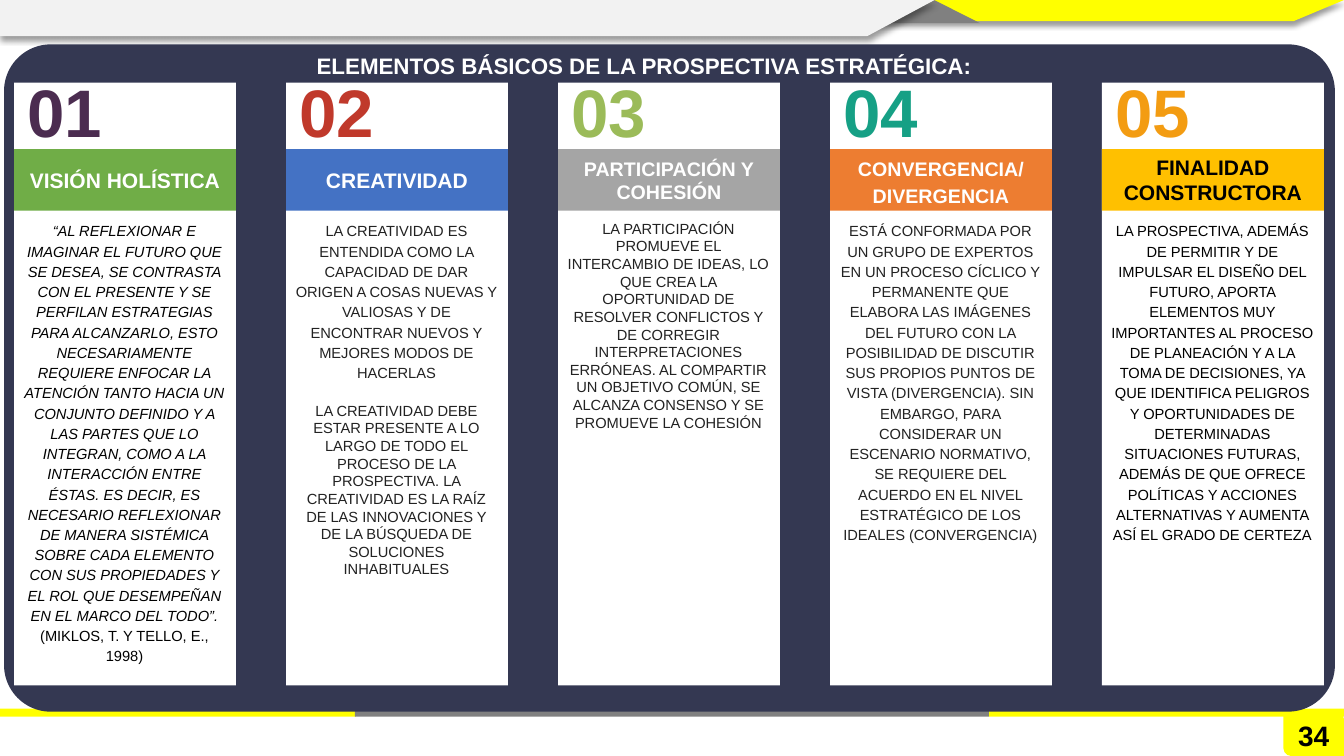
from dataclasses import dataclass

from lxml import etree
from pptx import Presentation
from pptx.dml.color import RGBColor
from pptx.enum.shapes import MSO_SHAPE as Preset
from pptx.enum.text import MSO_ANCHOR as Anchor, MSO_AUTO_SIZE as AutoSize, PP_ALIGN as Align
from pptx.oxml.ns import qn
from pptx.util import Inches, Pt


@dataclass(frozen=True)
class Theme:
    """Colours, font and type sizes of the slide."""
    font: str = "Arial"
    white: str = "FFFFFF"
    black: str = "000000"
    ink: str = "222222"
    navy: str = "343852"
    yellow: str = "FFFF00"
    grey: str = "808080"
    pale: str = "F2F2F2"
    title_size: float = 16
    number_size: float = 48
    body_size: float = 10.5
    page_size: float = 20


THEME = Theme()


@dataclass(frozen=True)
class Pillar:
    """One numbered column: its heading, colours and paragraphs of runs."""
    heading: str
    band: str
    number_color: str
    paragraphs: tuple
    heading_size: float = 15
    heading_color: str = THEME.white
    heading_spacing: float = 1.0
    body_color: str = THEME.ink
    body_spacings: tuple = (1.15,)


PILLARS = (
    Pillar(
        "VISIÓN HOLÍSTICA", "70AD47", "4B2C50",
        (((
            "“AL REFLEXIONAR E IMAGINAR EL FUTURO QUE SE DESEA, SE CONTRASTA CON EL "
            "PRESENTE Y SE PERFILAN ESTRATEGIAS PARA ALCANZARLO, ESTO NECESARIAMENTE "
            "REQUIERE ENFOCAR LA ATENCIÓN TANTO HACIA UN CONJUNTO DEFINIDO Y A LAS "
            "PARTES QUE LO INTEGRAN, COMO A LA INTERACCIÓN ENTRE ÉSTAS. ES DECIR, ES "
            "NECESARIO REFLEXIONAR DE MANERA SISTÉMICA SOBRE CADA ELEMENTO CON SUS "
            "PROPIEDADES Y EL ROL QUE DESEMPEÑAN EN EL MARCO DEL TODO”.", True),
          (" (MIKLOS, T. Y TELLO, E., 1998)", False)),),
        body_color=THEME.black),
    Pillar(
        "CREATIVIDAD", "4472C4", "C0392B",
        (((
            "LA CREATIVIDAD ES ENTENDIDA COMO LA CAPACIDAD DE DAR ORIGEN A COSAS "
            "NUEVAS Y VALIOSAS Y DE ENCONTRAR NUEVOS Y MEJORES MODOS DE HACERLAS", False),),
         ((
            "LA CREATIVIDAD DEBE ESTAR PRESENTE A LO LARGO DE TODO EL PROCESO DE LA "
            "PROSPECTIVA. LA CREATIVIDAD ES LA RAÍZ DE LAS INNOVACIONES Y DE LA "
            "BÚSQUEDA DE SOLUCIONES INHABITUALES", False),)),
        body_spacings=(1.15, 1.0)),
    Pillar(
        "PARTICIPACIÓN Y COHESIÓN", "A5A5A5", "9BBB59",
        (((
            "LA PARTICIPACIÓN PROMUEVE EL INTERCAMBIO DE IDEAS, LO QUE CREA LA "
            "OPORTUNIDAD DE RESOLVER CONFLICTOS Y DE CORREGIR INTERPRETACIONES "
            "ERRÓNEAS. AL COMPARTIR UN OBJETIVO COMÚN, SE ALCANZA CONSENSO Y SE "
            "PROMUEVE LA COHESIÓN", False),),),
        heading_size=14, body_spacings=(1.0,)),
    Pillar(
        "CONVERGENCIA/ DIVERGENCIA", "ED7D31", "16A085",
        (((
            "ESTÁ CONFORMADA POR UN GRUPO DE EXPERTOS EN UN PROCESO CÍCLICO Y "
            "PERMANENTE QUE ELABORA LAS IMÁGENES DEL FUTURO CON LA POSIBILIDAD DE "
            "DISCUTIR SUS PROPIOS PUNTOS DE VISTA (DIVERGENCIA). SIN EMBARGO, PARA "
            "CONSIDERAR UN ESCENARIO NORMATIVO, SE REQUIERE DEL ACUERDO EN EL NIVEL "
            "ESTRATÉGICO DE LOS IDEALES (CONVERGENCIA)", False),),),
        heading_size=14, heading_spacing=1.15),
    Pillar(
        "FINALIDAD CONSTRUCTORA", "FFC000", "F39C12",
        (((
            "LA PROSPECTIVA, ADEMÁS DE PERMITIR Y DE IMPULSAR EL DISEÑO DEL FUTURO, "
            "APORTA ELEMENTOS MUY IMPORTANTES AL PROCESO DE PLANEACIÓN Y A LA TOMA DE "
            "DECISIONES, YA QUE IDENTIFICA PELIGROS Y OPORTUNIDADES DE DETERMINADAS "
            "SITUACIONES FUTURAS, ADEMÁS DE QUE OFRECE POLÍTICAS Y ACCIONES "
            "ALTERNATIVAS Y AUMENTA ASÍ EL GRADO DE CERTEZA", False),),),
        heading_color=THEME.black, body_color=THEME.black),
)


def paint(shape, color):
    """Give a shape a plain fill without line or shadow."""
    shape.shadow.inherit = False
    shape.fill.solid()
    shape.fill.fore_color.rgb = RGBColor.from_string(color)
    shape.line.fill.background()
    return shape


def add_block(slide, box, color, preset=Preset.RECTANGLE):
    """Draw a filled preset shape."""
    return paint(slide.shapes.add_shape(preset, *map(Inches, box)), color)


def add_banner(slide, points, color):
    """Draw a header outline with a soft shadow below it."""
    start, *rest = [(Inches(x), Inches(y)) for x, y in points]
    builder = slide.shapes.build_freeform(*start)
    builder.add_line_segments(rest, close=True)
    banner = paint(builder.convert_to_shape(), color)
    effects = banner.element.spPr.find(qn("a:effectLst"))
    shadow = etree.SubElement(effects, qn("a:outerShdw"), blurRad=str(Pt(4)),
                              dist=str(Pt(3)), dir="5400000", rotWithShape="0")
    tint = etree.SubElement(shadow, qn("a:srgbClr"), val=THEME.black)
    etree.SubElement(tint, qn("a:alpha"), val="40000")


def set_frame(frame, anchor=Anchor.TOP, side=0.1, edge=0.05, wrap=True):
    """Set wrapping, anchoring and insets of a text frame."""
    frame.word_wrap = wrap
    frame.auto_size = AutoSize.NONE
    frame.vertical_anchor = anchor
    frame.margin_left = frame.margin_right = Inches(side)
    frame.margin_top = frame.margin_bottom = Inches(edge)


def write(paragraph, runs, size, color, bold=False, align=Align.CENTER, spacing=1.0):
    """Fill a paragraph with (text, italic) runs."""
    paragraph.alignment = align
    paragraph.line_spacing = spacing
    for text, italic in runs:
        run = paragraph.add_run()
        run.text = text
        run.font.name = THEME.font
        run.font.size = Pt(size)
        run.font.bold = bold
        run.font.italic = italic
        run.font.color.rgb = RGBColor.from_string(color)


def add_text_frame(slide, box, **layout):
    """Add a text box and return its frame."""
    frame = slide.shapes.add_textbox(*map(Inches, box)).text_frame
    set_frame(frame, **layout)
    return frame


def add_decoration(slide):
    """Draw the header banners, footer stripe and page number."""
    add_banner(slide, [(6.3, 0), (13.33, 0), (12.83, 0.21), (6.3, 0.21)], THEME.yellow)
    add_block(slide, (8.81, 0, 0.91, 0.23), THEME.grey, Preset.ISOSCELES_TRIANGLE)
    add_banner(slide, [(0, 0), (9.27, 0), (8.6, 0.36), (0, 0.36)], THEME.pale)
    for left, width, color in ((0, 3.53, THEME.yellow), (3.52, 6.29, THEME.grey),
                               (9.81, 3.52, THEME.yellow)):
        add_block(slide, (left, 7.03, width, 0.08), color)
    page = add_block(slide, (12.73, 7.06, 0.6, 0.44), THEME.yellow,
                     Preset.ROUND_2_DIAG_RECTANGLE)
    page.adjustments[0], page.adjustments[1] = 0, 0.17
    set_frame(page.text_frame)
    write(page.text_frame.paragraphs[0], [("34", False)], THEME.page_size,
          THEME.black, bold=True)


def add_title(slide, text):
    """Place the title placeholder over the panel."""
    title = slide.shapes.title
    title.element.getparent().append(title.element)
    title.left, title.top, title.width, title.height = map(Inches, (3.04, 0.43, 6.77, 0.39))
    set_frame(title.text_frame, wrap=False)
    write(title.text_frame.paragraphs[0], [(text, False)], THEME.title_size, THEME.white,
          bold=True, align=Align.LEFT, spacing=1.15)


def add_pillar(slide, index, pillar):
    """Draw one numbered column with its heading band and text."""
    left, width = 0.14 + 2.6975 * index, 2.2
    add_block(slide, (left, 0.82, width, 5.98), THEME.white)
    band = add_block(slide, (left, 1.48, width, 0.61), pillar.band)
    set_frame(band.text_frame, Anchor.MIDDLE, side=0, edge=0.07)
    write(band.text_frame.paragraphs[0], [(pillar.heading, False)], pillar.heading_size,
          pillar.heading_color, bold=True, spacing=pillar.heading_spacing)
    number = add_text_frame(slide, (left, 0.63, width, 0.94), side=0.13, edge=0.07)
    write(number.paragraphs[0], [(f"{index + 1:02}", False)], THEME.number_size,
          pillar.number_color, bold=True, align=Align.LEFT)
    body = add_text_frame(slide, (left - 0.01, 2.13, width + 0.01, 4.57))
    for order, (runs, spacing) in enumerate(zip(pillar.paragraphs, pillar.body_spacings)):
        paragraph = body.add_paragraph() if order else body.paragraphs[0]
        if order:
            paragraph.space_before = Pt(14.4)
        write(paragraph, runs, THEME.body_size, pillar.body_color, spacing=spacing)


def main():
    """Build and save the slide."""
    deck = Presentation()
    deck.slide_width, deck.slide_height = Inches(13.33), Inches(7.5)
    slide = deck.slides.add_slide(deck.slide_layouts[5])
    add_decoration(slide)
    panel = add_block(slide, (0.04, 0.44, 13.2, 6.62), THEME.navy, Preset.ROUNDED_RECTANGLE)
    panel.adjustments[0] = 0.07
    add_title(slide, "ELEMENTOS BÁSICOS DE LA PROSPECTIVA ESTRATÉGICA:")
    for index, pillar in enumerate(PILLARS):
        add_pillar(slide, index, pillar)
    deck.save("out.pptx")


if __name__ == "__main__":
    main()
